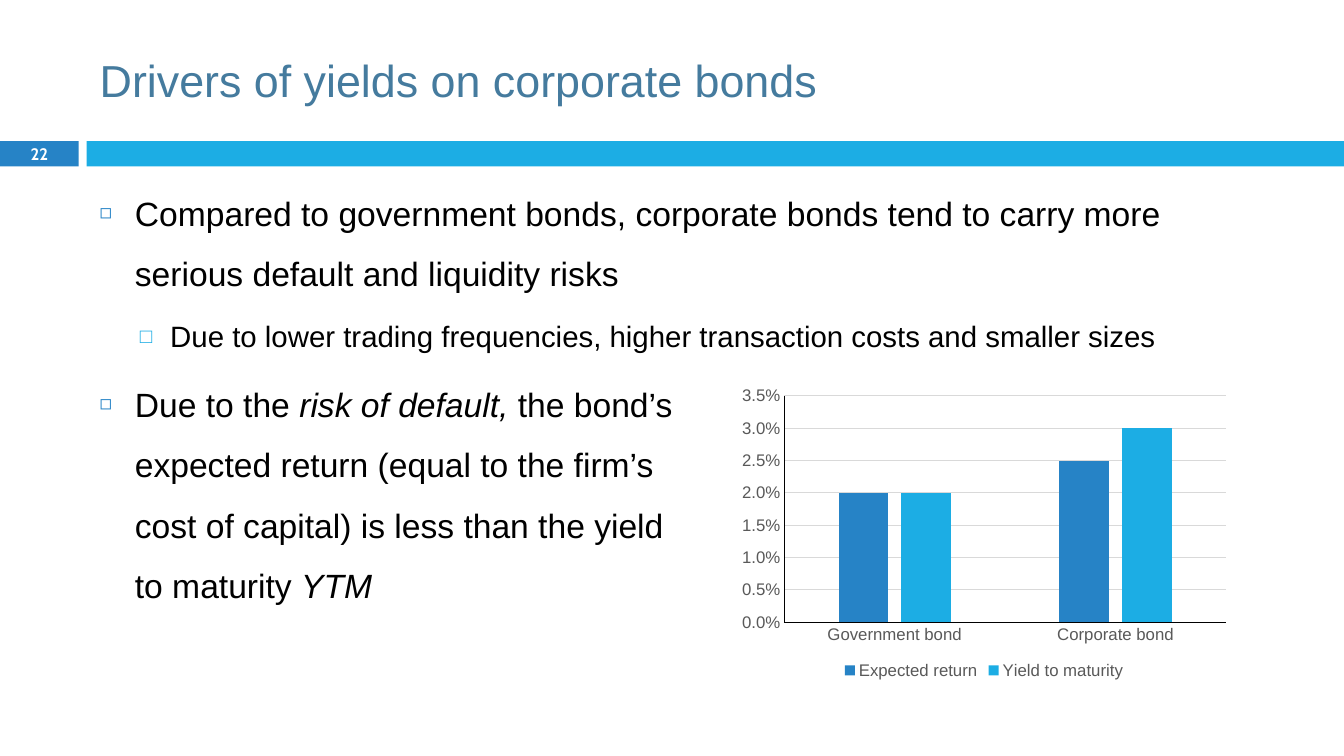
from lxml.etree import SubElement
from pptx import Presentation
from pptx.chart.data import CategoryChartData
from pptx.dml.color import RGBColor
from pptx.enum.chart import XL_CHART_TYPE, XL_LEGEND_POSITION, XL_TICK_MARK
from pptx.enum.shapes import MSO_SHAPE
from pptx.enum.text import MSO_ANCHOR, PP_ALIGN
from pptx.oxml.ns import qn
from pptx.util import Inches, Pt

# Content
TITLE = "Drivers of yields on corporate bonds"
PAGE_NUMBER = "22"
# Each bullet: level, then runs of (text, italic); a newline is a line break
BULLETS = [
    (0, [("Compared to government bonds, corporate bonds tend to carry more "
          "serious default and liquidity risks", False)]),
    (1, [("Due to lower trading frequencies, higher transaction costs "
          "and smaller sizes", False)]),
    (0, [("Due to the ", False), ("risk of default, ", True),
         ("the bond’s\nexpected return (equal to the firm’s\n"
          "cost of capital) is less than the yield\nto maturity ", False),
         ("YTM", True)]),
]
CATEGORIES = ["Government bond", "Corporate bond"]
SERIES = [("Expected return", (0.02, 0.02 + 0.005), "blue"),
          ("Yield to maturity", (0.02, 0.03), "cyan")]


class Theme:
    font = "Arial"
    number_font = "Cabin"
    colors = {"blue": "2683C6", "cyan": "1CADE4", "title": "457B9E",
              "text": "000000", "label": "595959", "grid": "D9D9D9",
              "white": "FFFFFF"}
    title_size = 32
    number_size = 11.9
    chart_size = 12
    line_width = 0.75
    # Per level: size, space before, left margin, hanging, bullet, color, percent
    levels = [(24, 7, 0.35, 0.35, "◻", "blue", 60),
              (21, 5.5, 0.7, 0.3, "□", "cyan", 70)]


def color(name):
    return RGBColor.from_string(Theme.colors[name])


def style_font(font, size, color_name, name=Theme.font):
    font.size = Pt(size)
    font.name = name
    font.color.rgb = color(color_name)


def add_bar(slide, left, width, color_name):
    bar = slide.shapes.add_shape(MSO_SHAPE.RECTANGLE, Inches(left), Inches(1.4),
                                 Inches(width), Inches(0.25))
    bar.shadow.inherit = False
    bar.fill.solid()
    bar.fill.fore_color.rgb = color(color_name)
    bar.line.fill.background()


def add_text_frame(slide, left, top, width, height, anchor):
    box = slide.shapes.add_textbox(Inches(left), Inches(top),
                                   Inches(width), Inches(height))
    frame = box.text_frame
    frame.word_wrap = True
    frame.vertical_anchor = anchor
    return frame


def add_run(paragraph, text, size, color_name, name=Theme.font):
    run = paragraph.add_run()
    run.text = text
    style_font(run.font, size, color_name, name)
    return run


def add_bullet(paragraph, level, runs):
    size, before, margin, hanging, mark, mark_color, percent = Theme.levels[level]
    paragraph.level = level
    paragraph.line_spacing = 1.5
    paragraph.space_before = Pt(before)
    properties = paragraph._p.get_or_add_pPr()
    properties.set("marL", str(Inches(margin)))
    properties.set("indent", str(-Inches(hanging)))
    bullet_color = SubElement(properties, qn("a:buClr"))
    SubElement(bullet_color, qn("a:srgbClr"), val=Theme.colors[mark_color])
    SubElement(properties, qn("a:buSzPct"), val=str(percent * 1000))
    SubElement(properties, qn("a:buFont"), typeface=Theme.font)
    SubElement(properties, qn("a:buChar"), char=mark)
    for text, italic in runs:
        for index, line in enumerate(text.split("\n")):
            if index:
                paragraph.add_line_break()
            add_run(paragraph, line, size, "text").font.italic = italic


def add_yield_chart(slide):
    data = CategoryChartData(number_format="0.0%")
    data.categories = CATEGORIES
    for name, values, _ in SERIES:
        data.add_series(name, values)
    chart = slide.shapes.add_chart(XL_CHART_TYPE.COLUMN_CLUSTERED, Inches(7.26),
                                   Inches(3.78), Inches(5), Inches(3), data).chart
    chart.has_title = False
    style_font(chart.font, Theme.chart_size, "text")

    plot = chart.plots[0]
    plot.gap_width = 219
    plot.overlap = -27
    plot.vary_by_categories = False
    for series, (_, _, color_name) in zip(plot.series, SERIES):
        series.format.fill.solid()
        series.format.fill.fore_color.rgb = color(color_name)

    for axis in (chart.category_axis, chart.value_axis):
        axis.major_tick_mark = axis.minor_tick_mark = XL_TICK_MARK.NONE
        style_font(axis.tick_labels.font, Theme.chart_size, "label")
        axis.format.line.color.rgb = color("text")
        axis.format.line.width = Pt(Theme.line_width)

    value_axis = chart.value_axis
    value_axis.minimum_scale = 0
    value_axis.maximum_scale = 0.035
    value_axis.major_unit = 0.005
    value_axis.tick_labels.number_format = "0.0%"
    value_axis.tick_labels.number_format_is_linked = False
    grid_line = value_axis.major_gridlines.format.line
    grid_line.color.rgb = color("grid")
    grid_line.width = Pt(Theme.line_width)

    chart.has_legend = True
    chart.legend.position = XL_LEGEND_POSITION.BOTTOM
    chart.legend.include_in_layout = False
    style_font(chart.legend.font, Theme.chart_size, "label")


def main():
    presentation = Presentation()
    presentation.slide_width = Inches(13.33)
    presentation.slide_height = Inches(7.5)
    slide = presentation.slides.add_slide(presentation.slide_layouts[6])

    # Divider band
    add_bar(slide, 0, 0.78, "blue")
    add_bar(slide, 0.86, 12.47, "cyan")

    # Title
    frame = add_text_frame(slide, 0.89, 0.25, 11.89, 1.08, MSO_ANCHOR.MIDDLE)
    add_run(frame.paragraphs[0], TITLE, Theme.title_size, "title")

    # Page number
    frame = add_text_frame(slide, 0, 1.39, 0.78, 0.27, MSO_ANCHOR.MIDDLE)
    frame.margin_top = frame.margin_bottom = 0
    paragraph = frame.paragraphs[0]
    paragraph.alignment = PP_ALIGN.CENTER
    add_run(paragraph, PAGE_NUMBER, Theme.number_size, "white",
            Theme.number_font).font.bold = True

    # Bullets
    frame = add_text_frame(slide, 0.89, 1.66, 11.36, 5.39, MSO_ANCHOR.TOP)
    for index, (level, runs) in enumerate(BULLETS):
        paragraph = frame.add_paragraph() if index else frame.paragraphs[0]
        add_bullet(paragraph, level, runs)

    # Chart
    add_yield_chart(slide)

    presentation.save("out.pptx")


if __name__ == "__main__":
    main()
